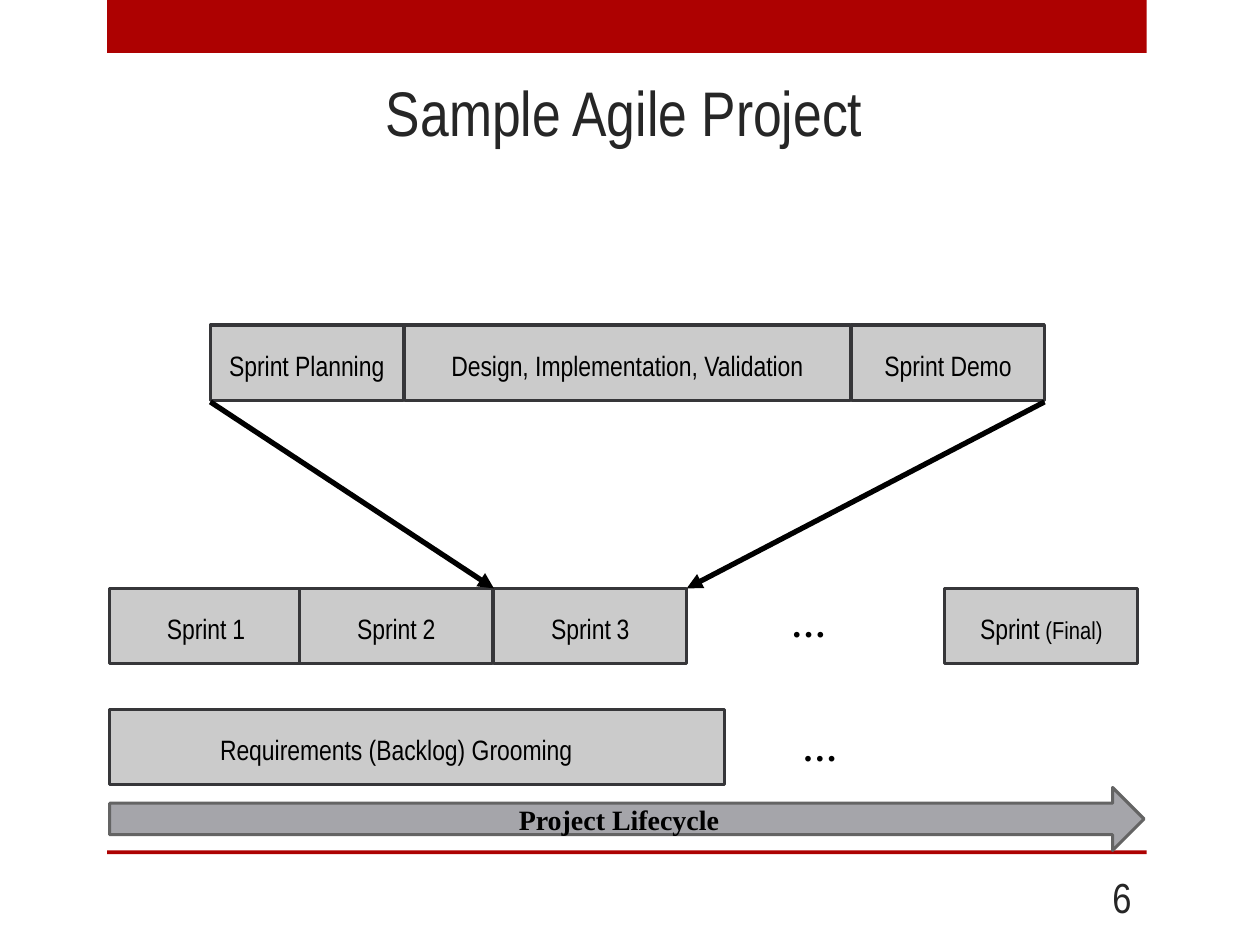
from lxml import etree
from pptx import Presentation
from pptx.dml.color import RGBColor
from pptx.enum.shapes import MSO_CONNECTOR as Link, MSO_SHAPE as Shape
from pptx.enum.text import MSO_ANCHOR as Anchor, MSO_AUTO_SIZE as Fit, PP_ALIGN as Align
from pptx.oxml.ns import qn
from pptx.util import Inches, Pt

RED = RGBColor(0xAD, 0x01, 0x01)
LIGHT = RGBColor(0xCB, 0xCB, 0xCB)
EDGE = RGBColor(0x36, 0x36, 0x39)
GREY = RGBColor(0xA5, 0xA5, 0xAA)
RIM = RGBColor(0x64, 0x64, 0x64)
BLACK = RGBColor(0, 0, 0)
INK = RGBColor(0x26, 0x26, 0x26)
SANS, SERIF = "Arial Narrow", "Times New Roman"
COLS, ROWS = 100, 75


class Board:
    """Draws on one slide; lengths are columns and rows of a 100 by 75 grid."""

    def __init__(self, deck):
        self.slide = deck.slides.add_slide(deck.slide_layouts[5])
        self.shapes = self.slide.shapes
        self.col = deck.slide_width / COLS
        self.row = deck.slide_height / ROWS

    def grid(self, x, y, w, h):
        return (round(x * self.col), round(y * self.row),
                round(w * self.col), round(h * self.row))

    def words(self, shape, parts, font=SANS, color=BLACK, bold=False,
              align=Align.CENTER, anchor=Anchor.MIDDLE):
        """Fill a shape with one line made of (text, size) parts."""
        frame = shape.text_frame
        frame.auto_size = Fit.NONE
        frame.vertical_anchor = anchor
        para = frame.paragraphs[0]
        para.alignment = align
        for text, size in parts:
            run = para.add_run()
            run.text = text
            run.font.name, run.font.size = font, Pt(size)
            run.font.bold, run.font.color.rgb = bold, color
        return frame

    def title(self, text, *place):
        head = self.shapes.title
        head.left, head.top, head.width, head.height = self.grid(*place)
        self.words(head, [(text, 36)], color=INK, anchor=Anchor.TOP)

    def block(self, place, fill, edge=None, kind=Shape.RECTANGLE):
        shape = self.shapes.add_shape(kind, *self.grid(*place))
        shape.shadow.inherit = False
        shape.fill.solid()
        shape.fill.fore_color.rgb = fill
        if edge is None:
            shape.line.fill.background()
        else:
            shape.line.color.rgb = edge
            shape.line.width = Pt(1.75)
        return shape

    def step(self, x, y, w, *parts, right=0):
        box = self.block((x, y, w, 6), LIGHT, EDGE)
        frame = self.words(box, parts)
        frame.word_wrap = False
        frame.margin_left = frame.margin_bottom = 0
        frame.margin_top = Inches(0.04)
        frame.margin_right = round(right * self.col)

    def label(self, place, text, size, **look):
        box = self.shapes.add_textbox(*self.grid(*place))
        self.words(box, [(text, size)], **look).word_wrap = True

    def arrow(self, x1, y1, x2, y2):
        ends = self.grid(x1, y1, x2, y2)
        link = self.shapes.add_connector(Link.STRAIGHT, *ends)
        link.line.color.rgb = BLACK
        link.line.width = Pt(3)
        props = link._element.spPr
        tip = etree.SubElement(props.find(qn("a:ln")), qn("a:tailEnd"))
        tip.set("type", "triangle")
        etree.SubElement(props, qn("a:effectLst"))


def main():
    deck = Presentation()
    deck.slide_width, deck.slide_height = Inches(10), Inches(7.5)
    board = Board(deck)

    board.block((8.5, 0, 82.5, 4.2), RED)
    board.block((8.5, 67.5, 82.5, 0.3), RED)
    board.label((82.5, 69.2, 8.3, 4), "6", 24, color=INK, align=Align.RIGHT)
    board.title("Sample Agile Project", 8.3, 5.3, 82.5, 6.4)

    left, wide = 8.7, 15.3
    cycle = board.block((left, 62.5, 82.1, 5), GREY, RIM, Shape.RIGHT_ARROW)
    frame = board.words(cycle, [("Project Lifecycle", 16)], SERIF, bold=True)
    frame.margin_top = frame.margin_bottom = 0

    top, low = 25.8, 46.7
    for num, x in enumerate((left, 23.8, 39.2), 1):
        board.step(x, low, wide, ("Sprint", 16), (" ", 14), (str(num), 16))
    board.step(75, low, wide, ("Sprint", 16), (" (Final)", 14))

    phases = (("Sprint Planning", 16.7, wide),
              ("Design, Implementation, Validation", 32.1, 35.4),
              ("Sprint Demo", 67.6, wide))
    for text, x, w in phases:
        board.step(x, top, w, (text, 16))

    board.step(left, 56.3, 48.8, ("Requirements (Backlog) Grooming", 16), right=3.3)
    for x, y in ((61.8, 47.3), (62.7, 57.1)):
        board.label((x, y, 4.8, 4.4), "…", 20, font=SERIF, bold=True, align=Align.LEFT)

    board.arrow(16.7, 31.9, 39.2, low)
    board.arrow(82.9, 31.9, 54.5, low)
    deck.save("out.pptx")


if __name__ == "__main__":
    main()
